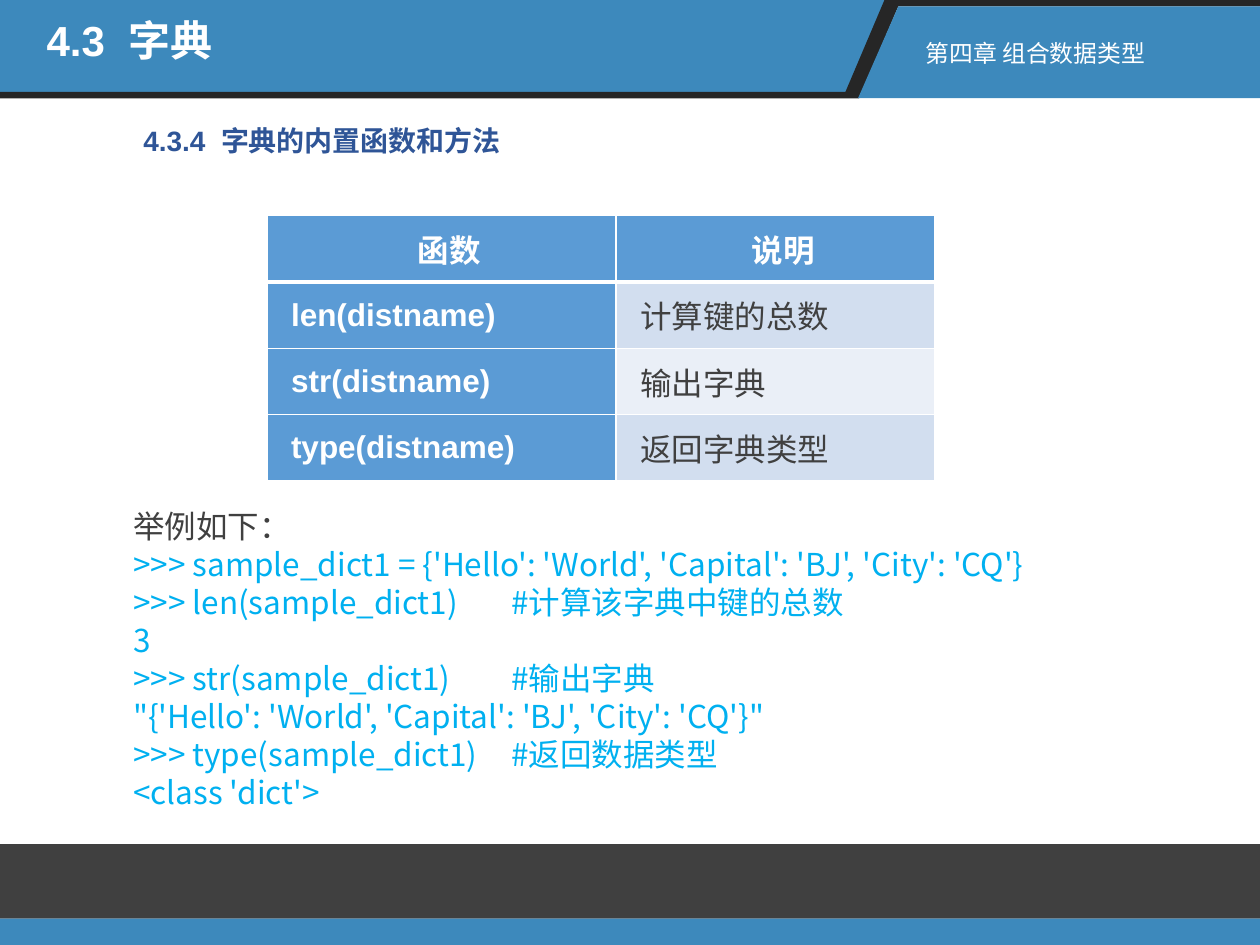
from lxml import etree
from pptx import Presentation
from pptx import util as u
from pptx.dml.color import RGBColor
from pptx.enum import shapes, text
from pptx.oxml import ns

BLUE = RGBColor(0x3D, 0x89, 0xBC)
BLACK = RGBColor(0x26, 0x26, 0x26)
GREY = RGBColor(0x40, 0x40, 0x40)
WHITE = RGBColor(0xFF, 0xFF, 0xFF)
NAVY = RGBColor(0x2F, 0x55, 0x97)
CYAN = RGBColor(0x00, 0xB0, 0xF0)
HEAD = RGBColor(0x5B, 0x9B, 0xD5)
BANDS = RGBColor(0xD2, 0xDE, 0xEF), RGBColor(0xEA, 0xEF, 0xF7)
LATIN, CJK = "Arial", "Noto Sans CJK SC"

FUNCTIONS = [
    ("函数", "说明"),
    ("len(distname)", "计算键的总数"),
    ("str(distname)", "输出字典"),
    ("type(distname)", "返回字典类型"),
]
EXAMPLE = [
    (">>> sample_dict1 = {'Hello': 'World', 'Capital': 'BJ', 'City': 'CQ'}",),
    (">>> len(sample_dict1)", "#计算该字典中键的总数", 3.81),
    ("3",),
    (">>> str(sample_dict1)", "#输出字典", 3.75),
    ("\"{'Hello': 'World', 'Capital': 'BJ', 'City': 'CQ'}\"",),
    (">>> type(sample_dict1)", "#返回数据类型", 3.85),
    ("<class 'dict'>",),
]


def sub(parent, tag, **attrs):
    return etree.SubElement(parent, ns.qn(tag), **attrs)


def add_run(p, words, size, color, bold=False, font=LATIN):
    r = p.add_run()
    r.text = words
    r.font.size, r.font.bold, r.font.name = u.Pt(size), bold, font
    r.font.color.rgb = color
    sub(r._r.get_or_add_rPr(), "a:ea", typeface=CJK)


def paint(sp, color):
    sp.shadow.inherit = False
    sp.fill.solid()
    sp.fill.fore_color.rgb = color
    sp.line.fill.background()


def add_polygon(s, points, color):
    start, *rest = [(u.Inches(x), u.Inches(y)) for x, y in points]
    builder = s.shapes.build_freeform(*start, scale=1.0)
    builder.add_line_segments(rest, close=True)
    paint(builder.convert_to_shape(), color)


def add_bar(s, x, y, w, h, color):
    box = map(u.Inches, (x, y, w, h))
    paint(s.shapes.add_shape(shapes.MSO_SHAPE.RECTANGLE, *box), color)


def add_text_box(s, x, y, w, h, wrap=True):
    tf = s.shapes.add_textbox(*map(u.Inches, (x, y, w, h))).text_frame
    tf.word_wrap = wrap
    return tf


def add_header(s, x, y, w, h):
    edge = y + 0.05
    base = y + h - 0.05
    bottom, right = y + h, x + w
    add_polygon(s, [(x, y), (x + 7.05, y), (x + 6.74, base), (x, base)], BLUE)
    add_polygon(s, [(x + 7.02, y), (right, y), (right, edge), (x + 7.13, edge),
                    (x + 6.82, bottom), (x, bottom), (x, base),
                    (x + 6.71, base)], BLACK)
    add_polygon(s, [(x + 7.13, edge), (right, edge), (right, bottom),
                    (x + 6.81, bottom)], BLUE)
    tf = add_text_box(s, x + 7.25, y + 0.26, 1.95, 0.33, wrap=False)
    add_run(tf.paragraphs[0], "第四章 组合数据类型", 13.6, WHITE)


def add_footer(s, x, y, w, h):
    add_bar(s, x, y, w, h - 0.21, GREY)
    add_bar(s, x, y + h - 0.21, w, 0.21, BLUE)


def set_title(s, x, y, w, h):
    sp = s.shapes.title
    sp.left, sp.top, sp.width, sp.height = map(u.Inches, (x, y, w, h))
    tf = sp.text_frame
    tf.auto_size = text.MSO_AUTO_SIZE.NONE
    tf.vertical_anchor = text.MSO_ANCHOR.TOP
    p = tf.paragraphs[0]
    p.alignment = text.PP_ALIGN.LEFT
    p.line_spacing = 0.9
    add_run(p, "4.3  字典", 24, WHITE, True)


def add_subtitle(s, x, y, w, h):
    p = add_text_box(s, x, y, w, h).paragraphs[0]
    p.line_spacing = 0.9
    add_run(p, "4.3.4  字典的内置函数和方法", 16, NAVY, True)


def set_borders(cell, bottom):
    tcPr = cell._tc.get_or_add_tcPr()
    widths = {"a:lnL": 1, "a:lnR": 1, "a:lnT": 1, "a:lnB": bottom}
    for i, (tag, width) in enumerate(widths.items()):
        ln = etree.Element(ns.qn(tag), w=str(u.Pt(width)))
        sub(sub(ln, "a:solidFill"), "a:srgbClr", val=str(WHITE))
        tcPr.insert(i, ln)


def add_function_table(s, x, y, w, h):
    box = map(u.Inches, (x, y, w, h))
    table = s.shapes.add_table(len(FUNCTIONS), 2, *box).table
    table.columns[0].width = u.Inches(2.77)
    table.columns[1].width = u.Inches(w - 2.77)
    for i, row in enumerate(FUNCTIONS):
        for j, words in enumerate(row):
            strong = i == 0 or j == 0
            cell = table.cell(i, j)
            cell.vertical_anchor = text.MSO_ANCHOR.MIDDLE
            cell.margin_left = cell.margin_right = u.Inches(0.07)
            cell.margin_top = cell.margin_bottom = 0
            cell.fill.solid()
            cell.fill.fore_color.rgb = HEAD if strong else BANDS[(i - 1) % 2]
            set_borders(cell, 1 if i else 3)
            p = cell.text_frame.paragraphs[0]
            p.alignment = text.PP_ALIGN.JUSTIFY if i else text.PP_ALIGN.CENTER
            p._p.get_or_add_pPr().set("marL", str(u.Inches(0.12)))
            add_run(p, words, 18, WHITE if strong else GREY, strong)


def add_example(s, x, y, w, h):
    tf = add_text_box(s, x, y, w, h)
    for i, (code, *note) in enumerate([("举例如下：",), *EXAMPLE]):
        p = tf.add_paragraph() if i else tf.paragraphs[0]
        p.line_spacing = u.Pt(21.7)
        pPr = p._p.get_or_add_pPr()
        pPr.set("marL", "0")
        pPr.set("indent", str(u.Inches(0.5)))
        color = CYAN if i else GREY
        add_run(p, code, 18, color, font=CJK)
        if note:
            comment, stop = note
            sub(sub(pPr, "a:tabLst"), "a:tab", pos=str(u.Inches(stop)), algn="l")
            add_run(p, "\t" + comment, 18, color, font=CJK)


def main():
    prs = Presentation()
    prs.slide_width, prs.slide_height = u.Inches(10), u.Inches(7.5)
    s = prs.slides.add_slide(prs.slide_layouts[5])
    add_header(s, 0, 0, 10, 0.78)
    add_footer(s, 0, 6.7, 10, 0.8)
    add_example(s, 0.46, 3.97, 9.07, 2.52)
    add_subtitle(s, 1.04, 0.96, 3.51, 0.6)
    add_function_table(s, 2.12, 1.71, 5.3, 2.11)
    set_title(s, 0.27, 0.11, 4.08, 0.62)
    tree = s.shapes._spTree
    tree.append(s.shapes.title._element)
    prs.save("out.pptx")


if __name__ == "__main__":
    main()
